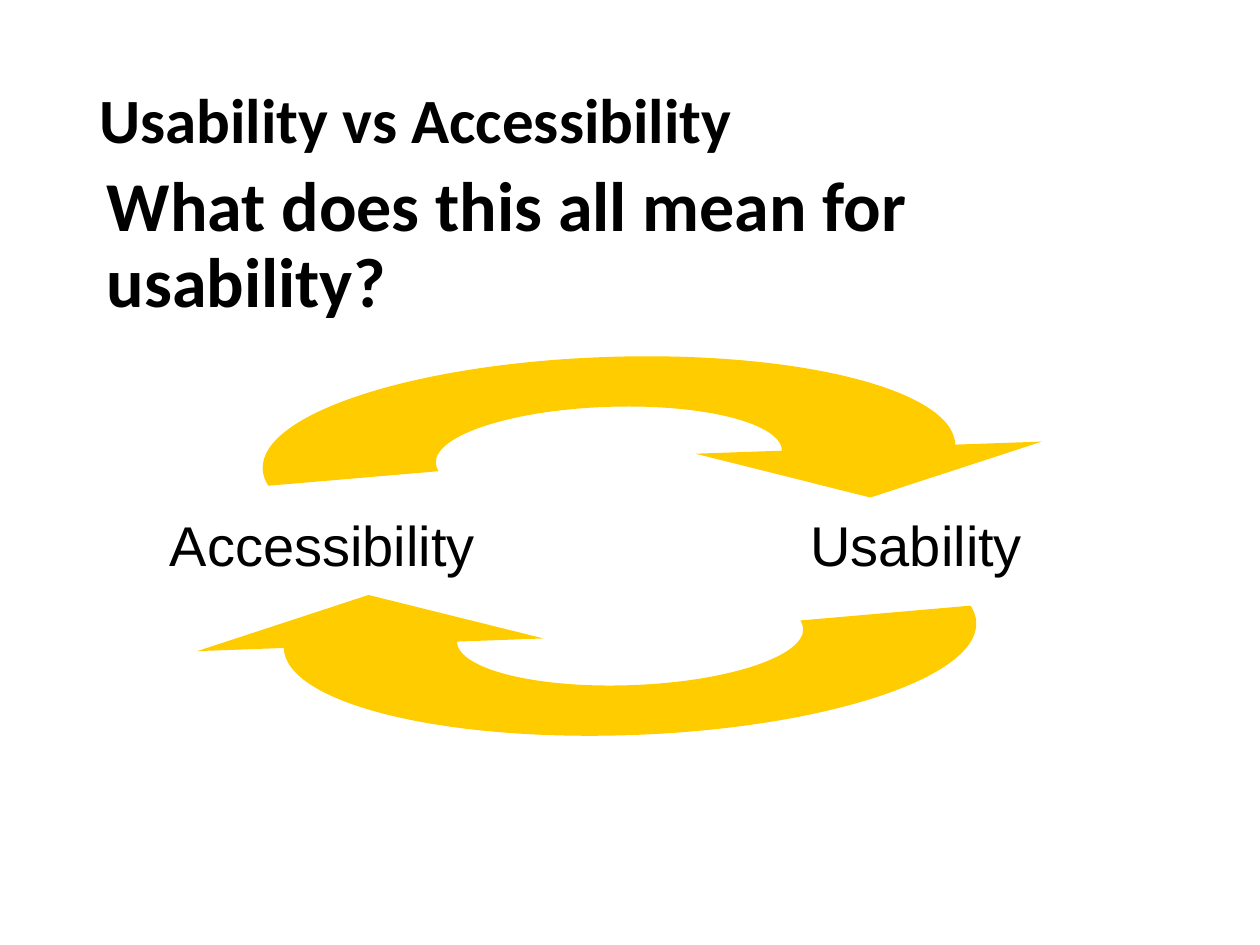
from lxml import etree
from pptx import Presentation
from pptx.dml.color import RGBColor
from pptx.enum.text import MSO_ANCHOR
from pptx.oxml.ns import qn
from pptx.util import Pt

MIDDLE, TOP = MSO_ANCHOR.MIDDLE, MSO_ANCHOR.TOP
COLORS = {"text": "000000", "arrow": "FFCC00"}

# Curved arrow in points, measured from the corner of its box before turning.
# Three pairs make a Bezier curve, one pair makes a line.
ARROW_SIZE = (396, 114)
ARROW_START = (297, 57)
ARROW_SEGMENTS = [
    [(297, 41.3), (252.7, 28.5), (198, 28.5)],
    [(143.3, 28.5), (99, 41.3), (99, 57)],
    [(99, 58.6), (99.5, 60.3), (100.4, 61.9)],
    [(2.9, 66.8)],
    [(1, 63.6), (0, 60.3), (0, 57)],
    [(0, 25.5), (88.6, 0), (198, 0)],
    [(307.4, 0), (396, 25.5), (396, 57)],
    [(445.5, 57)],
    [(346.5, 85.5)],
    [(247.5, 57)],
]


class SlideBuilder:
    """Holds the style and the current slide."""

    def __init__(self, page):
        self.page = page

    def color(self, name):
        return RGBColor.from_string(COLORS[name])

    def text(self, words, left, top, width, height, font, size,
             bold=False, anchor=TOP, line_spacing=1.0):
        box = self.page.shapes.add_textbox(Pt(left), Pt(top), Pt(width), Pt(height))
        frame = box.text_frame
        frame.word_wrap = True
        frame.vertical_anchor = anchor
        frame.text = words
        para = frame.paragraphs[0]
        para.line_spacing = line_spacing
        span = para.runs[0]
        span.font.name = font
        span.font.size = Pt(size)
        span.font.bold = bold
        span.font.color.rgb = self.color("text")

    def heading(self, words, left, top, width, height, size):
        self.text(words, left, top, width, height, "Calibri", size,
                  bold=True, anchor=MIDDLE, line_spacing=0.9)

    def label(self, words, left, width):
        self.text(words, left, 288, width, 42, "Arial", 32)

    def curved_arrow(self, left, top, rotation):
        width, height = ARROW_SIZE
        builder = self.page.shapes.build_freeform(Pt(left), Pt(top))
        builder.add_line_segments([(Pt(left + width), Pt(top + height))])
        shape = builder.convert_to_shape()
        self.trace_arrow(shape)
        shape.rotation = rotation
        shape.shadow.inherit = False
        shape.fill.solid()
        shape.fill.fore_color.rgb = self.color("arrow")
        shape.line.fill.background()

    def trace_arrow(self, shape):
        """Replace the box diagonal by the arrow with true curves."""
        trace = next(shape._element.iter(qn("a:path")))
        for child in list(trace):
            trace.remove(child)
        self.add_step(trace, "a:moveTo", [ARROW_START])
        for segment in ARROW_SEGMENTS:
            self.add_step(trace, "a:cubicBezTo" if len(segment) == 3 else "a:lnTo", segment)
        self.add_step(trace, "a:close", [])

    def add_step(self, trace, tag, points):
        step = etree.SubElement(trace, qn(tag))
        for x, y in points:
            etree.SubElement(step, qn("a:pt"), x=str(int(Pt(x))), y=str(int(Pt(y))))


def main():
    deck = Presentation()
    deck.slide_width, deck.slide_height = Pt(720), Pt(540)
    slide = SlideBuilder(deck.slides.add_slide(deck.slide_layouts[6]))

    slide.heading("What does this all mean for usability?", 54, 96, 612, 90, 40)
    slide.label("Accessibility", 90, 246)
    slide.label("Usability", 456, 168)
    slide.curved_arrow(150, 204, 358)
    slide.curved_arrow(162, 306, 177.9)
    slide.heading("Usability vs Accessibility", 49.7, 18, 620.6, 104.4, 36)

    deck.save("out.pptx")


if __name__ == "__main__":
    main()
